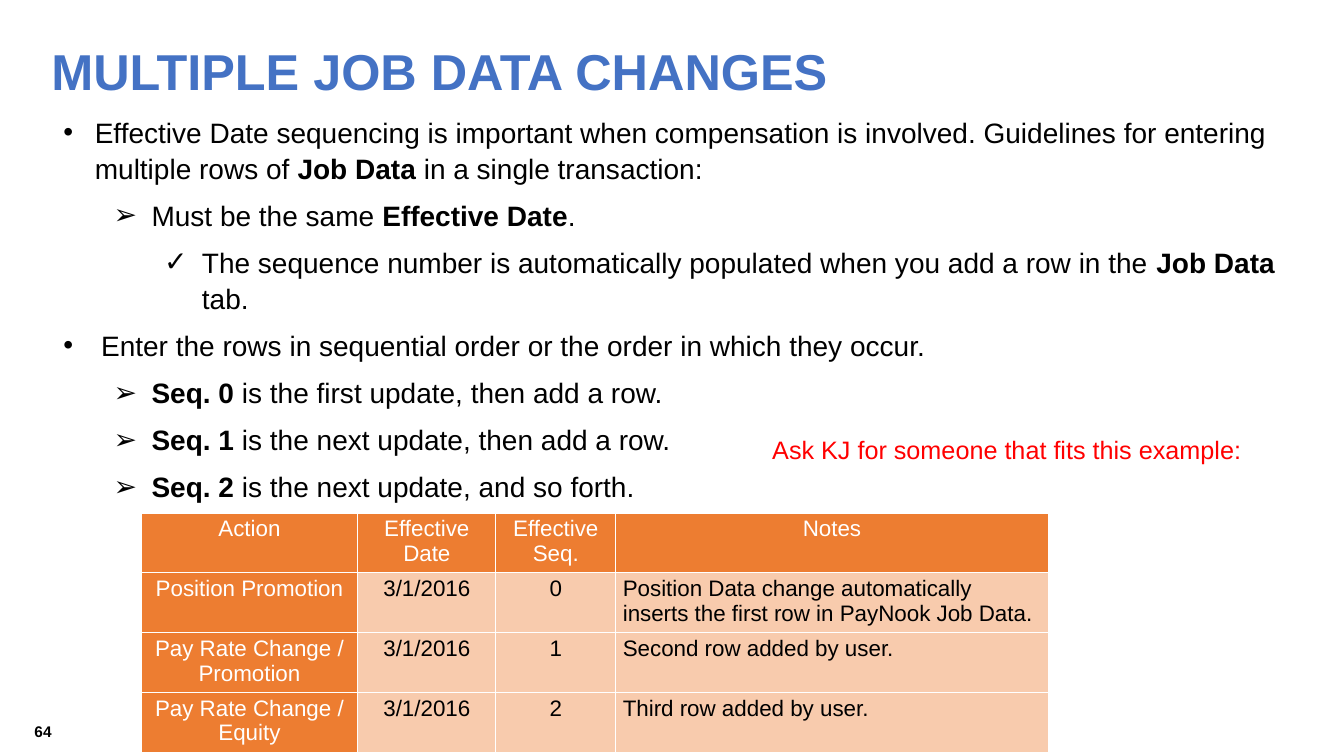
from lxml.etree import SubElement
from pptx import Presentation
from pptx.dml.color import RGBColor
from pptx.enum.text import MSO_ANCHOR, MSO_AUTO_SIZE, PP_ALIGN
from pptx.oxml import parse_xml
from pptx.oxml.ns import nsdecls, qn
from pptx.util import Pt

COLORS = {"title": "4472C4", "text": "000000", "remark": "FF0000", "white": "FFFFFF",
          "strong": "ED7D31", "pale": "F8CBAD"}

# Bullet styles: level, left margin, hanging indent, character
MAIN = (0, 22.5, 22.5, "•")
WIDE = (0, 27, 27, "•")
ARROW = (1, 63, 27, "➢")
CHECK = (2, 99, 27, "✓")

# Asterisks enclose bold words
GUIDELINES = [
    (MAIN, "Effective Date sequencing is important when compensation is involved. Guidelines "
           "for entering multiple rows of *Job Data *in a single transaction:"),
    (ARROW, "Must be the same *Effective Date*."),
    (CHECK, "The sequence number is automatically populated when you add a row in the "
            "*Job Data *tab."),
    (WIDE, "Enter the rows in sequential order or the order in which they occur."),
    (ARROW, "*Seq. 0 *is the first update, then add a row."),
    (ARROW, "*Seq. 1 *is the next update, then add a row."),
    (ARROW, "*Seq. 2 *is the next update, and so forth."),
]
JOB_ROWS = [
    ("Action", "Effective\nDate", "Effective\nSeq.", "Notes"),
    ("Position Promotion", "3/1/2016", "0",
     "Position Data change automatically inserts the first row in PayNook Job Data."),
    ("Pay Rate Change / Promotion", "3/1/2016", "1", "Second row added by user."),
    ("Pay Rate Change / Equity", "3/1/2016", "2", "Third row added by user."),
]
COLUMN_SHARES = (2.15, 1.37, 1.19, 4.29)


def format_run(run, size, color, bold=False):
    run.font.name = "Arial"
    run.font.size = Pt(size)
    run.font.bold = bold
    run.font.color.rgb = RGBColor.from_string(COLORS[color])


def place(shape, box):
    shape.left, shape.top, shape.width, shape.height = map(Pt, box)


def add_title(slide, box):
    title = slide.shapes.title
    place(title, box)
    title.text_frame.text = "MULTIPLE JOB DATA CHANGES"
    title.text_frame.auto_size = MSO_AUTO_SIZE.NONE
    title.text_frame.vertical_anchor = MSO_ANCHOR.MIDDLE
    heading = title.text_frame.paragraphs[0]
    heading.alignment = PP_ALIGN.LEFT
    format_run(heading.runs[0], 36, "title", True)


def set_bullet(paragraph, style):
    level, margin, hanging, character = style
    paragraph.level = level
    properties = paragraph._p.get_or_add_pPr()
    properties.set("marL", str(Pt(margin)))
    properties.set("indent", str(-Pt(hanging)))
    SubElement(properties, qn("a:buFont")).set("typeface", "Arial")
    SubElement(properties, qn("a:buChar")).set("char", character)


def add_guidelines(slide, box):
    guidelines = slide.placeholders[1]
    place(guidelines, box)
    frame = guidelines.text_frame
    frame.auto_size = MSO_AUTO_SIZE.NONE
    for index, (style, wording) in enumerate(GUIDELINES):
        line = frame.add_paragraph() if index else frame.paragraphs[0]
        line.alignment = PP_ALIGN.LEFT
        line.line_spacing = 1.07
        line.space_before = Pt(0)
        line.space_after = Pt(8)
        set_bullet(line, style)
        for part, words in enumerate(wording.split("*")):
            if words:
                run = line.add_run()
                run.text = words
                format_run(run, 20, "text", part % 2 == 1)


def add_borders(cell):
    properties = cell._tc.get_or_add_tcPr()
    for index, side in enumerate(("lnL", "lnR", "lnT", "lnB")):
        properties.insert(index, parse_xml(
            f'<a:{side} {nsdecls("a")} w="{Pt(1)}"><a:solidFill>'
            f'<a:srgbClr val="{COLORS["white"]}"/></a:solidFill></a:{side}>'))


def add_job_table(slide, box):
    table = slide.shapes.add_table(len(JOB_ROWS), len(COLUMN_SHARES), *map(Pt, box)).table
    for column, share in zip(table.columns, COLUMN_SHARES):
        column.width = Pt(box[2] * share / sum(COLUMN_SHARES))
    for r, job_row in enumerate(JOB_ROWS):
        for c, wording in enumerate(job_row):
            cell = table.cell(r, c)
            strong = r == 0 or c == 0
            cell.text = wording
            cell.margin_left = cell.margin_right = Pt(5)
            cell.margin_top = cell.margin_bottom = Pt(2.5)
            cell.fill.solid()
            cell.fill.fore_color.rgb = RGBColor.from_string(COLORS["strong" if strong else "pale"])
            add_borders(cell)
            for line in cell.text_frame.paragraphs:
                line.alignment = PP_ALIGN.CENTER if strong or c < 3 else PP_ALIGN.LEFT
                format_run(line.runs[0], 16, "white" if strong else "text")


def add_label(slide, box, wording, size, color, bold=False, align=PP_ALIGN.LEFT,
              anchor=MSO_ANCHOR.TOP, wrap=True):
    frame = slide.shapes.add_textbox(*map(Pt, box)).text_frame
    frame.word_wrap = wrap
    frame.vertical_anchor = anchor
    frame.text = wording
    frame.paragraphs[0].alignment = align
    format_run(frame.paragraphs[0].runs[0], size, color, bold)


def main():
    deck = Presentation()
    deck.slide_width, deck.slide_height = Pt(960), Pt(540)
    slide = deck.slides.add_slide(deck.slide_layouts[1])
    add_title(slide, (29.5, 23, 863, 54))
    add_guidelines(slide, (38, 77, 884, 289.5))
    add_job_table(slide, (100.8, 366.5, 648, 170.8))
    # Remark beside the sequence list
    add_label(slide, (544.5, 306.7, 358, 29), "Ask KJ for someone that fits this example:",
              18, "remark", wrap=False)
    # Page number
    add_label(slide, (5, 507.5, 39, 29.5), "64", 11, "text", True,
              PP_ALIGN.RIGHT, MSO_ANCHOR.MIDDLE)
    deck.save("out.pptx")


if __name__ == "__main__":
    main()
